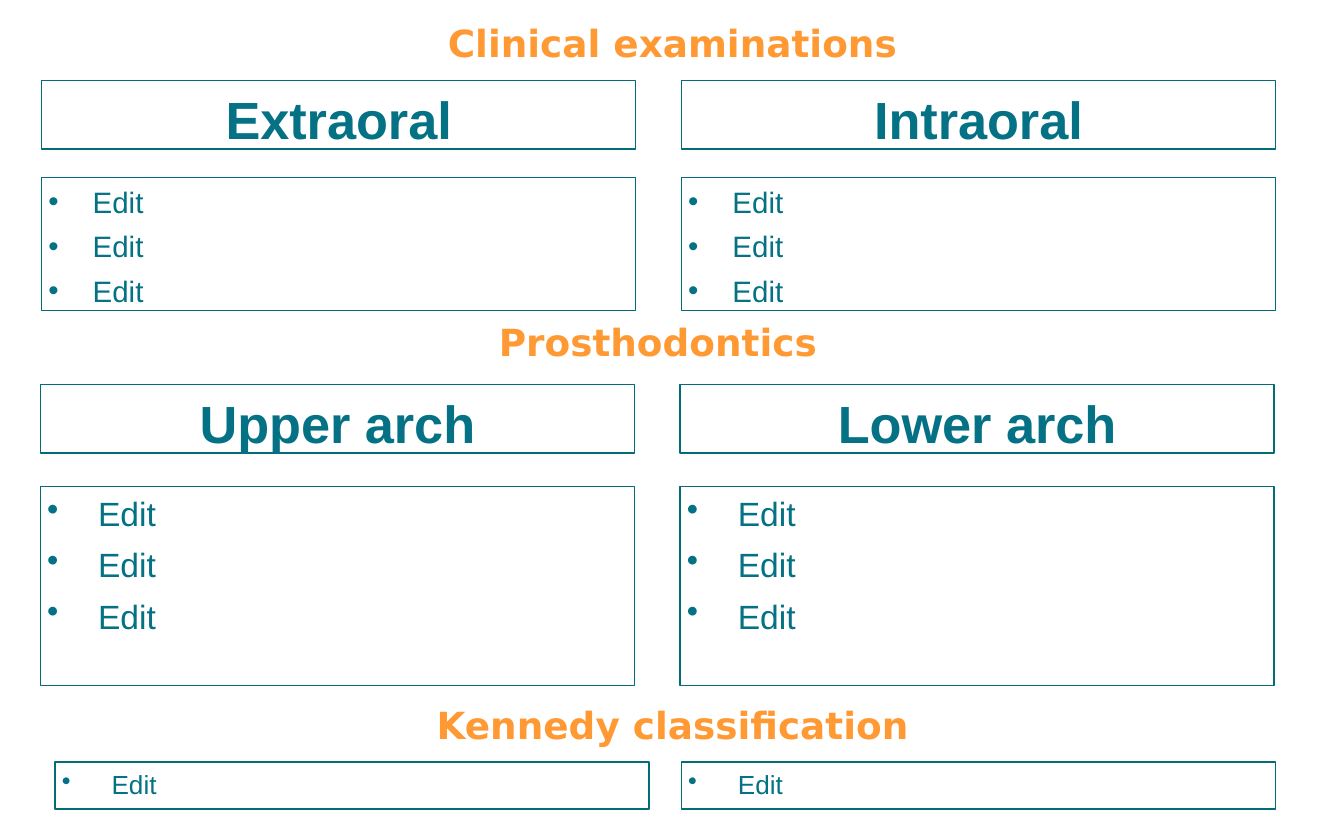
from dataclasses import dataclass
from typing import Optional

from lxml.etree import SubElement
from pptx import Presentation
from pptx.dml.color import RGBColor
from pptx.enum.shapes import MSO_SHAPE
from pptx.enum.text import MSO_ANCHOR, MSO_AUTO_SIZE, PP_ALIGN
from pptx.oxml.ns import qn
from pptx.util import Inches, Pt


@dataclass(frozen=True)
class Theme:
    orange: RGBColor = RGBColor(0xFF, 0x99, 0x33)
    teal: RGBColor = RGBColor(0x04, 0x72, 0x84)
    border: RGBColor = RGBColor(0x03, 0x6C, 0x77)
    title_font: str = "DejaVu Sans"
    body_font: str = "Arial"
    title_size: float = 20
    heading_size: float = 28
    border_width: float = 0.75
    inset: float = 0.05


@dataclass(frozen=True)
class ListStyle:
    size: float
    indent: float
    space_before: float


@dataclass(frozen=True)
class Section:
    title: str
    title_left: float
    title_top: float
    columns: tuple[float, float]
    headings: tuple[str, ...]
    heading_top: float
    list_top: float
    list_height: float
    items: tuple[str, ...]
    list_style: ListStyle


THEME = Theme()
COLUMN_WIDTH = 4.42
HEADING_HEIGHT = 0.51
TITLE_WIDTH, TITLE_HEIGHT = 9.69, 0.52

SECTIONS = (
    Section("Clinical examinations", 0.16, 0.06, (0.31, 5.07), ("Extraoral", "Intraoral"),
            0.6, 1.32, 0.99, ("Edit",) * 3, ListStyle(15.8, 0.33, 4.8)),
    Section("Prosthodontics", 0.05, 2.28, (0.3, 5.06), ("Upper arch", "Lower arch"),
            2.86, 3.62, 1.48, ("Edit",) * 3, ListStyle(18, 0.38, 5.8)),
    Section("Kennedy classification", 0.16, 5.13, (0.41, 5.07), (),
            0, 5.67, 0.35, ("Edit",), ListStyle(14, 0.37, 5)),
)


def place(slide, box: tuple, placeholder: Optional[int], bordered: bool):
    """Move a template placeholder, or add a rectangle, to the given box."""
    left, top, width, height = map(Inches, box)
    if placeholder is None:
        shape = slide.shapes.add_shape(MSO_SHAPE.RECTANGLE, left, top, width, height)
        shape.shadow.inherit = False
    else:
        shape = next(item for item in slide.placeholders
                     if item.placeholder_format.idx == placeholder)
        shape.left, shape.top, shape.width, shape.height = left, top, width, height
    shape.fill.background()
    if bordered:
        shape.line.color.rgb = THEME.border
        shape.line.width = Pt(THEME.border_width)
    else:
        shape.line.fill.background()
    return shape


def write(shape, lines: tuple, font_name: str, size: float, color: RGBColor,
          bold: bool, space_before: float, anchor: MSO_ANCHOR,
          bullet_indent: Optional[float] = None) -> None:
    """Fill a shape with one paragraph a line, bulleted if an indent is given."""
    frame = shape.text_frame
    frame.text = "\n".join(lines)
    frame.word_wrap = True
    frame.auto_size = MSO_AUTO_SIZE.NONE
    frame.vertical_anchor = anchor
    frame.margin_left = frame.margin_right = Inches(THEME.inset)
    frame.margin_top = frame.margin_bottom = Inches(THEME.inset)
    for paragraph in frame.paragraphs:
        paragraph.alignment = PP_ALIGN.CENTER if bullet_indent is None else PP_ALIGN.LEFT
        paragraph.space_before = Pt(space_before)
        if bullet_indent is not None:
            properties = paragraph._p.get_or_add_pPr()
            properties.set("marL", str(Inches(bullet_indent)))
            properties.set("indent", str(-Inches(bullet_indent)))
            SubElement(properties, qn("a:buChar")).set("char", "•")
        font = paragraph.font
        font.name, font.size, font.bold = font_name, Pt(size), bold
        font.color.rgb = color


def draw_section(slide, section: Section, use_placeholders: bool) -> None:
    # Section title
    title = place(slide, (section.title_left, section.title_top, TITLE_WIDTH, TITLE_HEIGHT),
                  0 if use_placeholders else None, bordered=False)
    write(title, (section.title,), THEME.title_font, THEME.title_size, THEME.orange,
          True, 0, MSO_ANCHOR.MIDDLE)

    # Column headings
    for column, text in enumerate(section.headings):
        box = (section.columns[column], section.heading_top, COLUMN_WIDTH, HEADING_HEIGHT)
        heading = place(slide, box, 2 * column + 1 if use_placeholders else None, True)
        write(heading, (text,), THEME.body_font, THEME.heading_size, THEME.teal,
              True, 16, MSO_ANCHOR.TOP)

    # Column lists
    style = section.list_style
    for column, left in enumerate(section.columns):
        box = (left, section.list_top, COLUMN_WIDTH, section.list_height)
        panel = place(slide, box, 2 * column + 2 if use_placeholders else None, True)
        write(panel, section.items, THEME.body_font, style.size, THEME.teal,
              False, style.space_before, MSO_ANCHOR.TOP, style.indent)


def main() -> None:
    presentation = Presentation()
    presentation.slide_width, presentation.slide_height = Inches(10), Inches(6.25)
    comparison_layout = presentation.slide_layouts[4]
    slide = presentation.slides.add_slide(comparison_layout)
    # The layout's placeholders serve the first section
    for number, section in enumerate(SECTIONS):
        draw_section(slide, section, use_placeholders=number == 0)
    presentation.save("out.pptx")


if __name__ == "__main__":
    main()
